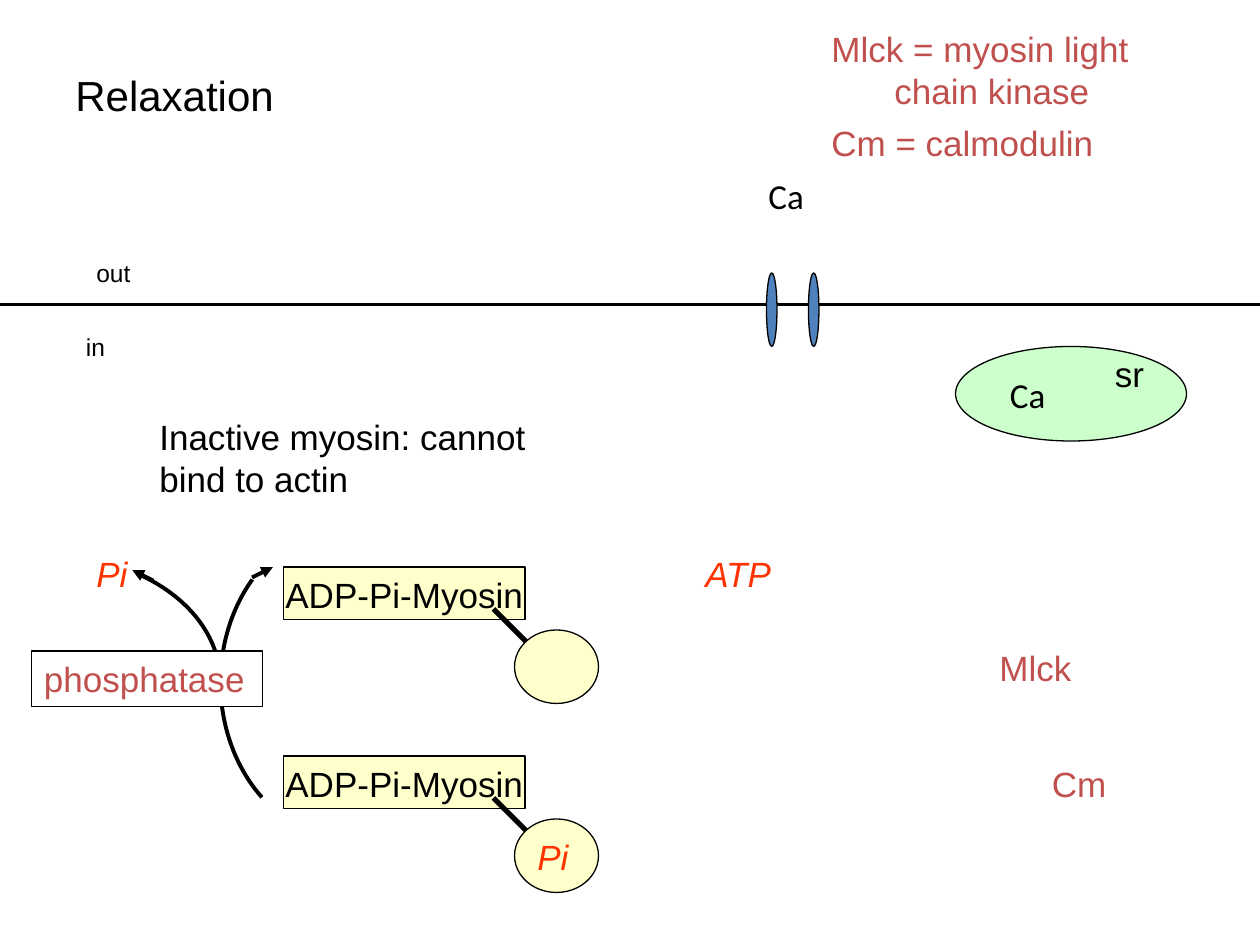
from pptx import Presentation
from pptx.dml.color import RGBColor
from pptx.enum.shapes import MSO_CONNECTOR, MSO_SHAPE
from pptx.enum.text import MSO_ANCHOR
from pptx.oxml.ns import qn
from pptx.util import Inches, Pt
from lxml.etree import SubElement

C = {"black": "000000", "white": "FFFFFF", "green": "CCFFCC", "cream": "FFFFCC",
     "blue": "4F81BD", "red": "C0504D", "orange": "FF3300"}

prs = Presentation()
prs.slide_width, prs.slide_height = Inches(10), Inches(7.5)
s = prs.slides.add_slide(prs.slide_layouts[6])
U = prs.slide_width // 120  # grid of 120 columns by 90 rows


def add(parent, kind, box, fill=None, width=0.75):
    """Outlined shape, or a plain text box when kind is None; box is in grid units."""
    box = [round(v * U) for v in box]
    if kind is None:
        return parent.add_textbox(*box)
    sp = parent.add_shape(kind, *box)
    sp.shadow.inherit = False
    if fill:
        sp.fill.solid()
        sp.fill.fore_color.rgb = RGBColor.from_string(C[fill])
    else:
        sp.fill.background()
    sp.line.color.rgb = RGBColor.from_string(C["black"])
    sp.line.width = Pt(width)
    return sp


def line(parent, ends, width=2.25, arrow=False):
    cx = parent.add_connector(MSO_CONNECTOR.STRAIGHT, *[round(v * U) for v in ends])
    cx.line.color.rgb = RGBColor.from_string(C["black"])
    cx.line.width = Pt(width)
    if arrow:
        SubElement(cx.line._get_or_add_ln(), qn("a:tailEnd"), type="triangle")
    SubElement(cx._element.spPr, qn("a:effectLst"))


# Sarcoplasmic reticulum
add(s.shapes, MSO_SHAPE.OVAL, (91, 33, 22, 9), "green")

# Curved arrows: arcs of ellipses, angles clockwise from three o'clock
for box, start, end in [((-11, 53, 32, 24), 308, 359), ((21, 50, 25, 30), 128, 226)]:
    arc = add(s.shapes, MSO_SHAPE.ARC, box, width=2.25)
    arc.adjustments[0], arc.adjustments[1] = start * 0.6, end * 0.6
for ends in [(24, 55, 26, 54), (14.6, 55.3, 12.6, 54.3)]:
    line(s.shapes, ends, arrow=True)

# Membrane with calcium channel
line(s.shapes, (0, 29, 120, 29))
channel = s.shapes.add_group_shape().shapes
for col in (73, 77):
    add(channel, MSO_SHAPE.OVAL, (col, 26, 1, 7), "blue")

# Myosin, dephosphorylated above and phosphorylated below
labels = []
for row in (54, 72):
    myosin = s.shapes.add_group_shape().shapes
    add(myosin, MSO_SHAPE.RECTANGLE, (27, row, 23, 5), "cream")
    labels.append((add(myosin, None, (26, row, 28, 5.2)), "ADP-Pi-Myosin", "black", 20))
    line(myosin, (51, row + 8, 47, row + 4), 3)
    add(myosin, MSO_SHAPE.OVAL, (49, row + 6, 8, 7), "cream")
labels.append((add(myosin, None, (50, 79, 10, 5.2)), "Pi", "orange", 20))

# Phosphatase
phosphatase = add(s.shapes, MSO_SHAPE.RECTANGLE, (3, 62, 22, 5.3), "white")
labels.append((phosphatase, "phosphatase", "red", 20))

# Free labels
for box, text, color, size in [
    ((6, 6, 43, 6), "Relaxation", "black", 24),
    ((8, 24, 7, 4), "out", "black", 14),
    ((7, 31, 7, 4), "in", "black", 14),
    ((72, 16, 6.7, 5.2), "Ca", "black", 20),
    ((95, 35, 6.7, 5.2), "Ca", "black", 20),
    ((105, 33, 7, 5.2), "sr", "black", 20),
    ((14, 39, 43, 9.2), "Inactive myosin: cannot bind to actin", "black", 20),
    ((8, 52, 10, 5.2), "Pi", "orange", 20),
    ((66, 52, 12, 5.2), "ATP", "orange", 20),
    ((94, 61, 17, 5.2), "Mlck", "red", 20),
    ((99, 72, 10, 5.2), "Cm", "red", 20),
    ((78, 2, 38, 9.2), "Mlck = myosin light\vchain kinase", "red", 20),
    ((78, 11, 31, 5.2), "Cm = calmodulin", "red", 20),
]:
    labels.append((add(s.shapes, None, box), text, color, size))

# Text of all labels
for sp, text, color, size in labels:
    tf = sp.text_frame
    tf.word_wrap = text != "Ca"
    tf.vertical_anchor = MSO_ANCHOR.TOP
    p = tf.paragraphs[0]
    p.text = text
    p.alignment = 1
    p.font.name = "Calibri" if text == "Ca" else "Arial"
    p.font.size = Pt(size)
    p.font.italic = color == "orange"
    p.font.color.rgb = RGBColor.from_string(C[color])
    if "\v" in text:  # hanging indent for the second line
        pPr = p._p.get_or_add_pPr()
        pPr.set("marL", str(6 * U))
        pPr.set("indent", str(-6 * U))

prs.save("out.pptx")
